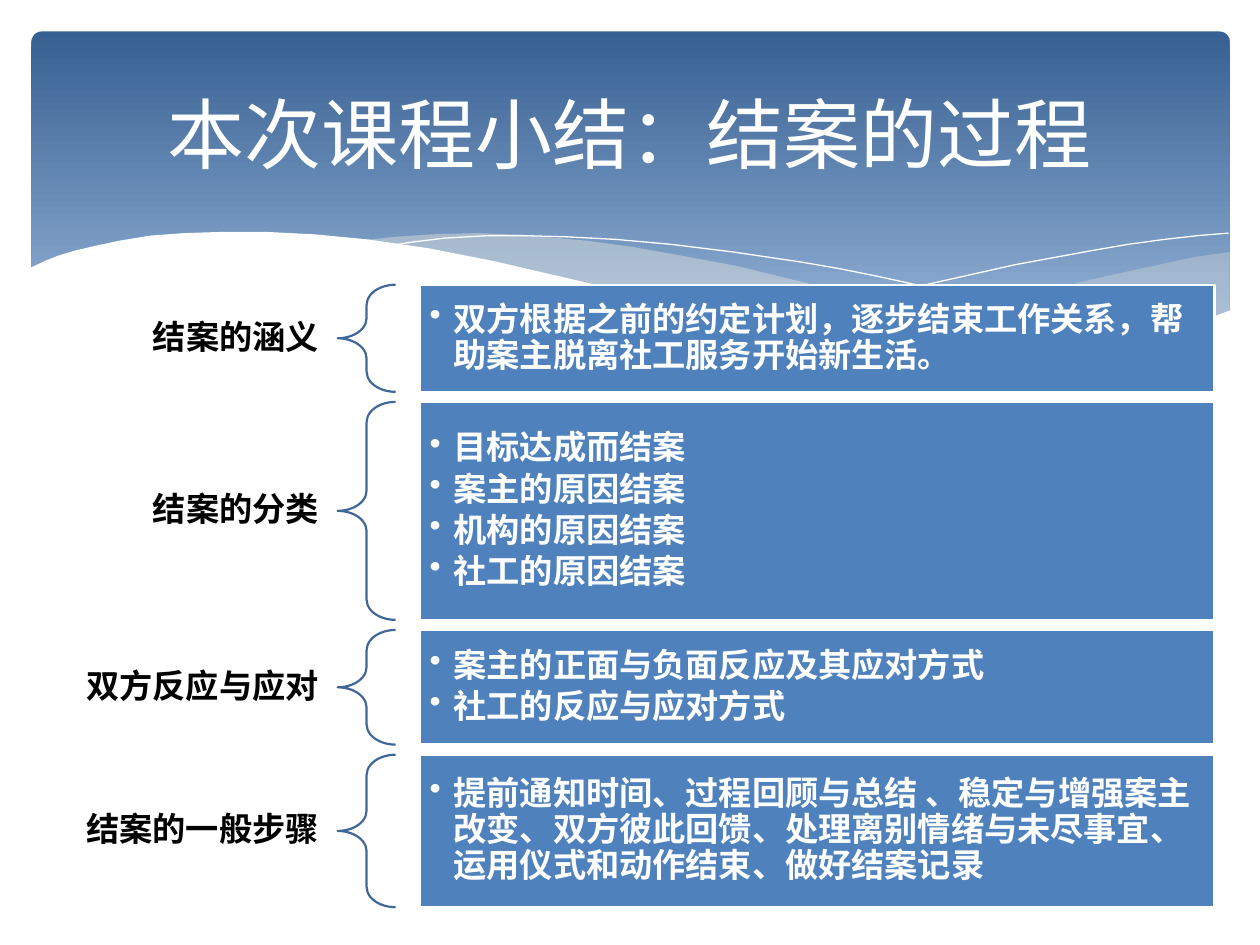
from lxml.etree import SubElement
from pptx import Presentation
from pptx.dml.color import RGBColor
from pptx.enum.lang import MSO_LANGUAGE_ID
from pptx.enum.shapes import MSO_SHAPE
from pptx.enum.text import MSO_ANCHOR, MSO_AUTO_SIZE, PP_ALIGN
from pptx.oxml.ns import qn
from pptx.util import Inches, Pt

WHITE = RGBColor(0xFF, 0xFF, 0xFF)
BLACK = RGBColor(0, 0, 0)
BLUE = RGBColor(0x4F, 0x81, 0xBD)
EDGE = RGBColor(0x3F, 0x67, 0x97)
DARK = RGBColor(0x37, 0x60, 0x92)
LIGHT = RGBColor(0x95, 0xB3, 0xD7)
CREAM = RGBColor(0xEE, 0xEC, 0xE1)
FONT = "Cabin"

TITLE = "本次课程小结：结案的过程"
# label, height of the row, points
ROWS = [
    ("结案的涵义", 0.85, ["双方根据之前的约定计划，逐步结束工作关系，帮助案主脱离社工服务开始新生活。"]),
    ("结案的分类", 1.73, ["目标达成而结案", "案主的原因结案", "机构的原因结案", "社工的原因结案"]),
    ("双方反应与应对", 0.91, ["案主的正面与负面反应及其应对方式", "社工的反应与应对方式"]),
    ("结案的一般步骤", 1.21, ["提前通知时间、过程回顾与总结 、稳定与增强案主改变、双方彼此回馈、"
                       "处理离别情绪与未尽事宜、运用仪式和动作结束、做好结案记录"]),
]
TOP, GAP = 2.26, 0.08
LABEL_H = 0.46

# points, fill opacity in percent (None for an open white line)
WAVES = [
    ([(9.76, 2), (9.48, 2.04), (9.06, 2.13), (8.61, 2.23), (8.05, 2.37), (7.53, 2.48),
      (7.06, 2.57), (6.61, 2.65), (6.91, 2.69), (7.19, 2.72), (7.57, 2.76), (8.03, 2.78),
      (8.44, 2.77), (8.81, 2.73), (9.13, 2.67), (9.42, 2.59), (9.63, 2.52), (9.76, 2.47)], 29),
    ([(8.93, 2.73), (8.66, 2.69), (8.07, 2.6), (7.41, 2.47), (6.68, 2.31), (6.29, 2.22),
      (5.84, 2.11), (5.41, 2.03), (5.02, 1.96), (4.65, 1.91), (4.2, 1.87), (3.8, 1.85),
      (3.44, 1.86), (3.13, 1.88), (2.86, 1.91), (3.23, 1.96), (3.62, 2.03), (4.04, 2.11),
      (4.49, 2.22), (4.91, 2.32), (5.3, 2.4), (5.84, 2.52), (6.34, 2.61), (6.8, 2.68),
      (7.22, 2.74), (7.61, 2.77), (8.07, 2.78), (8.48, 2.77)], 40),
    ([(3.09, 1.95), (3.28, 1.92), (3.53, 1.89), (3.87, 1.87), (4.16, 1.87), (4.5, 1.88),
      (4.89, 1.9), (5.33, 1.94), (5.82, 2), (6.36, 2.08), (6.65, 2.13), (6.95, 2.19),
      (7.27, 2.26), (7.6, 2.33), (7.95, 2.41), (8.31, 2.51), (8.69, 2.61), (9.07, 2.72)], None),
    ([(6.13, 2.57), (6.53, 2.46), (6.95, 2.35), (7.48, 2.23), (8.06, 2.1), (8.66, 1.99),
      (8.95, 1.94), (9.24, 1.9), (9.51, 1.87), (9.75, 1.85)], None),
    ([(9.77, 2.46), (9.59, 2.53), (9.4, 2.59), (9.2, 2.65), (8.99, 2.69), (8.75, 2.73),
      (8.5, 2.75), (8.23, 2.77), (7.93, 2.76), (7.61, 2.75), (7.26, 2.72), (6.88, 2.68),
      (6.48, 2.62), (6.03, 2.54), (5.55, 2.45), (5.03, 2.33), (4.47, 2.2), (3.91, 2.07),
      (3.4, 1.97), (2.92, 1.9), (2.5, 1.86), (2.11, 1.84), (1.77, 1.84), (1.46, 1.85),
      (1.19, 1.87), (0.95, 1.91), (0.76, 1.95), (0.59, 1.99), (0.46, 2.03), (0.36, 2.07),
      (0.23, 2.13), (0.23, 3.29), (9.77, 3.29)], 100),
]


def box(x, y, w, h):
    return Inches(x), Inches(y), Inches(w), Inches(h)


def paint(shape, fill=None, line=None, width=1.25):
    shape.shadow.inherit = False
    if fill is None:
        shape.fill.background()
    else:
        shape.fill.solid()
        shape.fill.fore_color.rgb = fill
    if line is None:
        shape.line.fill.background()
    else:
        shape.line.color.rgb = line
        shape.line.width = Pt(width)


def write(shape, lines, size=19, color=WHITE, bold=True, align=PP_ALIGN.LEFT,
          pad=(0.08, 0.08), space=None, after=0, bullet=False):
    frame = shape.text_frame
    frame.word_wrap = True
    frame.auto_size = MSO_AUTO_SIZE.NONE
    frame.vertical_anchor = MSO_ANCHOR.MIDDLE
    frame.margin_left = frame.margin_right = Inches(pad[0])
    frame.margin_top = frame.margin_bottom = Inches(pad[1])
    for i, line in enumerate(lines):
        para = frame.paragraphs[0] if i == 0 else frame.add_paragraph()
        para.alignment, para.line_spacing, para.space_after = align, space, Pt(after)
        run = para.add_run()
        run.text = line
        font = run.font
        font.name, font.size, font.bold = FONT, Pt(size), bold
        font.color.rgb = color
        font.language_id = MSO_LANGUAGE_ID.SIMPLIFIED_CHINESE
        if bullet:
            para.level = 1
            props = para._p.get_or_add_pPr()
            props.set("marL", str(Inches(0.19)))
            props.set("indent", str(-Inches(0.19)))
            SubElement(props, qn("a:buChar")).set("char", "•")


def draw_wave(shapes, points, alpha):
    spots = [(Inches(x), Inches(y)) for x, y in points]
    builder = shapes.build_freeform(*spots[0])
    builder.add_line_segments(spots[1:], close=alpha is not None)
    wave = builder.convert_to_shape()
    if alpha is None:
        paint(wave, line=WHITE, width=0)
    elif alpha == 100:
        paint(wave, fill=WHITE)
    else:
        paint(wave, fill=CREAM)
        tone = wave._element.spPr.find(qn("a:solidFill"))[0]
        SubElement(tone, qn("a:alpha")).set("val", str(alpha * 1000))


def draw_header(shapes):
    band = shapes.add_shape(MSO_SHAPE.ROUNDED_RECTANGLE, *box(0.25, 0.25, 9.51, 2.7))
    band.adjustments[0] = 0.03
    paint(band)
    band.fill.gradient()
    band.fill.gradient_angle = 270
    for stop, color, place in zip(band.fill.gradient_stops, (DARK, LIGHT), (0, 0.9)):
        stop.color.rgb = color
        stop.position = place
    for points, alpha in WAVES:
        draw_wave(shapes, points, alpha)


def draw_row(shapes, y, label, h, points):
    name = shapes.add_textbox(*box(0.36, y + (h - LABEL_H) / 2, 2.32, LABEL_H))
    write(name, [label], color=BLACK, align=PP_ALIGN.RIGHT, pad=(0.15, 0.05), space=0.9)
    brace = shapes.add_shape(MSO_SHAPE.LEFT_BRACE, *box(2.68, y, 0.46, h))
    brace.adjustments[0] = 0.35
    paint(brace, line=EDGE)
    panel = shapes.add_shape(MSO_SHAPE.RECTANGLE, *box(3.33, y, 6.31, h))
    paint(panel, fill=BLUE, line=WHITE)
    write(panel, points, space=0.9, after=3, bullet=True)


def main():
    deck = Presentation()
    deck.slide_width, deck.slide_height = Inches(10), Inches(7.5)
    slide = deck.slides.add_slide(deck.slide_layouts[5])
    shapes = slide.shapes
    draw_header(shapes)
    y = TOP
    for label, h, points in ROWS:
        draw_row(shapes, y, label, h, points)
        y += h + GAP
    title = shapes.title
    title.left, title.top, title.width, title.height = box(0.5, 0.37, 9, 1.37)
    write(title, [TITLE], size=44, bold=False, align=PP_ALIGN.CENTER, pad=(0.1, 0.05))
    shapes._spTree.append(title._element)  # bring the title in front of the header
    deck.save("out.pptx")


if __name__ == "__main__":
    main()
